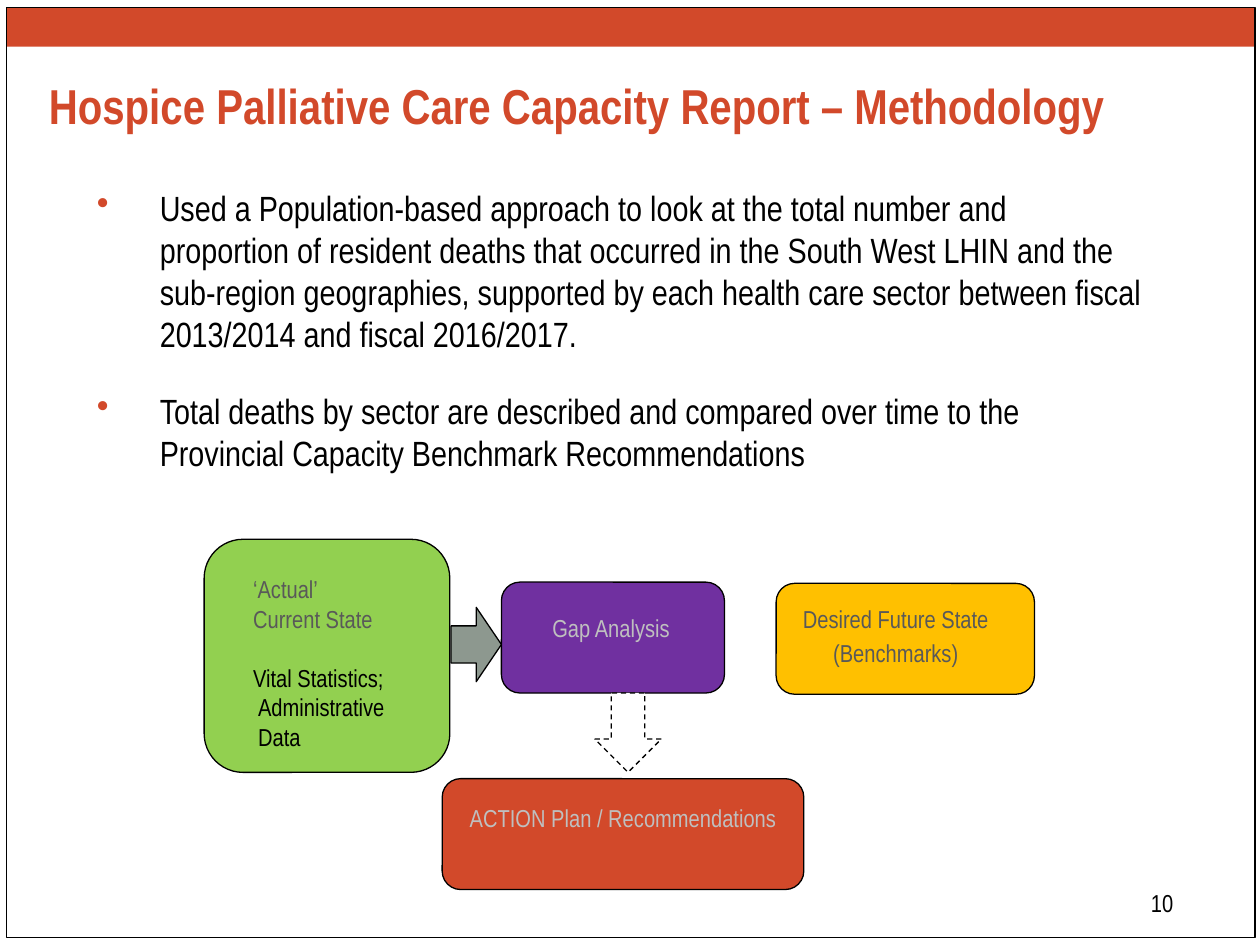
from lxml import etree
from pptx import Presentation
from pptx.dml.color import RGBColor
from pptx.enum.dml import MSO_LINE
from pptx.enum.shapes import MSO_SHAPE
from pptx.enum.text import PP_ALIGN
from pptx.oxml.ns import qn
from pptx.util import Inches, Pt

RECTANGLE = MSO_SHAPE.RECTANGLE
ROUNDED = MSO_SHAPE.ROUNDED_RECTANGLE
RIGHT_ARROW = MSO_SHAPE.RIGHT_ARROW
DOWN_ARROW = MSO_SHAPE.DOWN_ARROW
LEFT, CENTER, RIGHT = PP_ALIGN.LEFT, PP_ALIGN.CENTER, PP_ALIGN.RIGHT

FONT = "Arial Narrow"
BLACK = RGBColor(0x00, 0x00, 0x00)
WHITE = RGBColor(0xFF, 0xFF, 0xFF)
RED = RGBColor(0xD2, 0x49, 0x2A)
YELLOW = RGBColor(0xFF, 0xC0, 0x00)
PURPLE = RGBColor(0x70, 0x30, 0xA0)
GREEN = RGBColor(0x92, 0xD0, 0x50)
GRAY_GREEN = RGBColor(0x8D, 0x98, 0x8F)
DARK_GRAY = RGBColor(0x59, 0x59, 0x59)
LIGHT_GRAY = RGBColor(0xBF, 0xBF, 0xBF)

presentation = Presentation()
presentation.slide_width = Inches(10)
presentation.slide_height = Inches(7.5)
slide = presentation.slides.add_slide(presentation.slide_layouts[6])


def add_box(kind, position, fill, line):
    shape = slide.shapes.add_shape(kind, *[Inches(value) for value in position])
    shape.shadow.inherit = False
    if fill is None:
        shape.fill.background()
    else:
        shape.fill.solid()
        shape.fill.fore_color.rgb = fill
    if line is None:
        shape.line.fill.background()
    else:
        shape.line.color.rgb = line
        shape.line.width = Pt(0.75)
    return shape


def add_text(position, lines, size, color, alignment=LEFT, bold=False):
    text_box = slide.shapes.add_textbox(*[Inches(value) for value in position])
    text_frame = text_box.text_frame
    text_frame.word_wrap = True
    text_frame.text = "\n".join(lines)
    for paragraph in text_frame.paragraphs:
        paragraph.alignment = alignment
        font = paragraph.runs[0].font
        font.name = FONT
        font.size = Pt(size)
        font.bold = bold
        font.color.rgb = color
    return text_frame.paragraphs


add_box(RECTANGLE, (0.05, 0.06, 9.91, 0.31), RED, None)
add_box(RECTANGLE, (0.05, 0.06, 9.91, 7.38), None, BLACK)
add_text((7.33, 7, 2.08, 0.5), ["10"], 14, BLACK, RIGHT)

body = [
    "Used a Population-based approach to look at the total number and proportion of "
    "resident deaths that occurred in the South West LHIN and the sub-region geographies, "
    "supported by each health care sector between fiscal 2013/2014 and fiscal 2016/2017.",
    "Total deaths by sector are described and compared over time to the "
    "Provincial Capacity Benchmark Recommendations",
]
for paragraph in add_text((0.67, 1.43, 8.5, 4.5), body, 20, BLACK):
    paragraph.space_after = Pt(20)
    properties = paragraph._p.get_or_add_pPr()
    properties.set("marL", str(Inches(0.5)))
    properties.set("indent", str(Inches(-0.5)))
    bullet_color = etree.SubElement(properties, qn("a:buClr"))
    etree.SubElement(bullet_color, qn("a:srgbClr"), val=str(RED))
    etree.SubElement(properties, qn("a:buChar"), char="•")

title = ["Hospice Palliative Care Capacity Report – Methodology"]
add_text((0.29, 0.55, 8.88, 1), title, 28, RED, bold=True)

for position, fill in [
    ((6.16, 4.63, 2.05, 0.88), YELLOW),
    ((3.51, 6.18, 2.87, 0.88), RED),
    ((3.98, 4.62, 1.77, 0.88), PURPLE),
    ((1.62, 4.28, 1.95, 1.85), GREEN),
]:
    add_box(ROUNDED, position, fill, BLACK)

benchmarks = ["Desired Future State", "(Benchmarks)"]
for paragraph in add_text((5.63, 4.71, 2.96, 0.72), benchmarks, 14, DARK_GRAY, CENTER):
    paragraph.line_spacing = 1.15

current_state = ["‘Actual’", "Current State", "Vital Statistics;", "Administrative", "Data"]
state_paragraphs = add_text((1.69, 4.51, 1.85, 1.84), current_state, 14, DARK_GRAY)
for paragraph, margin in zip(state_paragraphs, (0.22, 0.22, 0.22, 0.26, 0.26)):
    paragraph._p.get_or_add_pPr().set("marL", str(Inches(margin)))
for paragraph in state_paragraphs[2:]:
    paragraph.runs[0].font.color.rgb = BLACK
state_paragraphs[2].space_before = Pt(17)

add_text((4.21, 4.82, 1.28, 0.4), ["Gap Analysis"], 14, LIGHT_GRAY, CENTER)
action = ["ACTION Plan / Recommendations"]
add_text((3.51, 6.32, 2.87, 0.72), action, 14, LIGHT_GRAY, CENTER)

down_arrow = add_box(DOWN_ARROW, (4.72, 5.5, 0.53, 0.63), WHITE, BLACK)
down_arrow.line.dash_style = MSO_LINE.DASH
add_box(RIGHT_ARROW, (3.58, 4.82, 0.4, 0.59), GRAY_GREEN, BLACK)

presentation.save("out.pptx")
